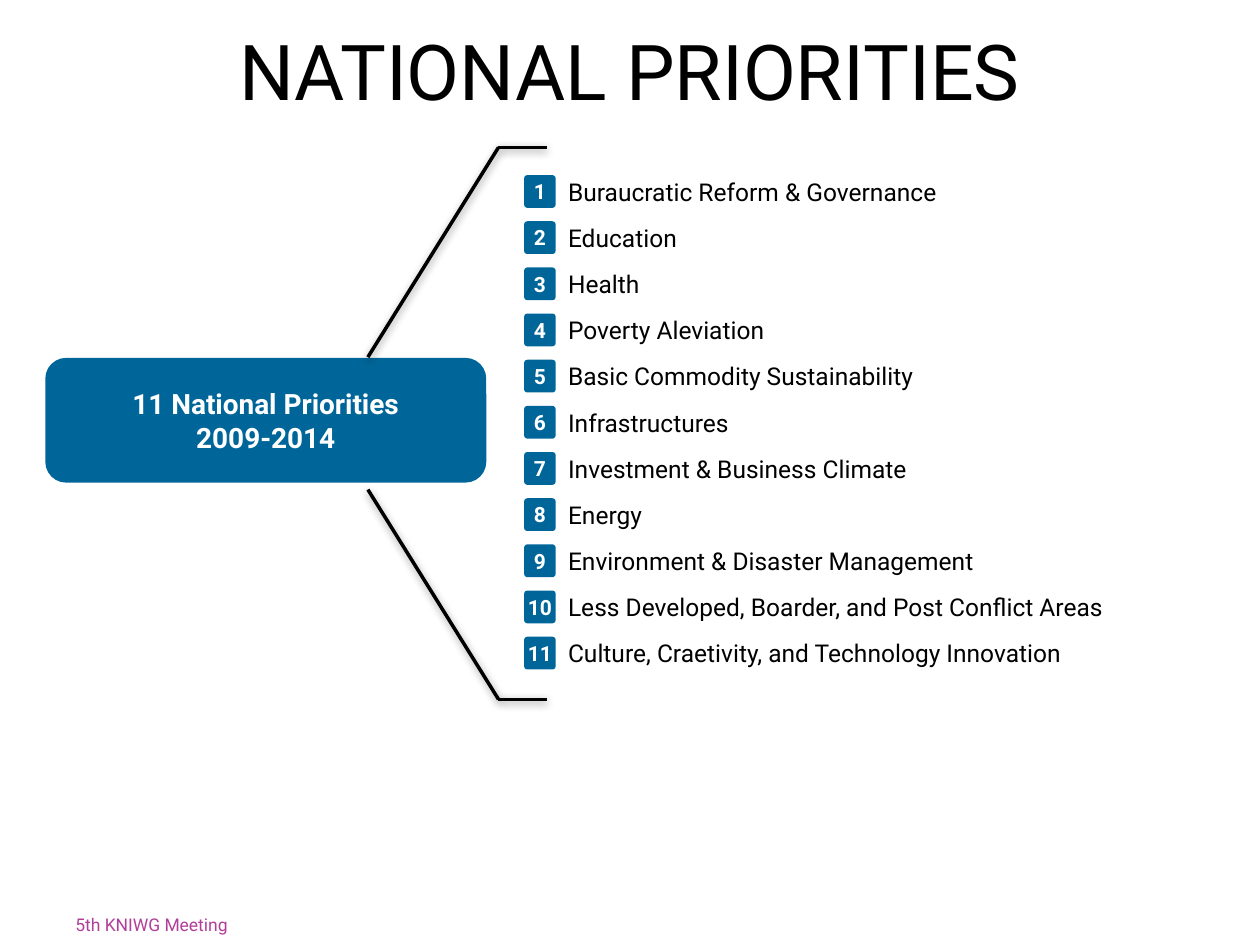
import dataclasses

import lxml.etree
import pptx
import pptx.dml.color
import pptx.enum.shapes
import pptx.enum.text
import pptx.oxml.ns
import pptx.util

ALIGN = pptx.enum.text.PP_ALIGN
ANCHOR = pptx.enum.text.MSO_ANCHOR
CELL = pptx.util.Inches(0.1)
COLUMNS, ROWS = 100, 75

PRIORITIES = [
    "Buraucratic Reform & Governance",
    "Education",
    "Health",
    "Poverty Aleviation",
    "Basic Commodity Sustainability",
    "Infrastructures",
    "Investment & Business Climate",
    "Energy",
    "Environment & Disaster Management",
    "Less Developed, Boarder, and Post Conflict Areas",
    "Culture, Craetivity, and Technology Innovation",
]


@dataclasses.dataclass(frozen=True)
class Theme:
    font: str = "Roboto"
    ink: str = "000000"
    blue: str = "006699"
    light: str = "FFFFFF"
    magenta: str = "B13F9A"
    title_size: int = 44
    banner_size: int = 16
    label_size: int = 14
    number_size: int = 12
    footer_size: int = 10
    line_width: int = 2


@dataclasses.dataclass(frozen=True)
class Box:
    left: float
    top: float
    width: float
    height: float

    def lengths(self):
        return [round(value * CELL) for value in dataclasses.astuple(self)]

    def point(self, across, down):
        return (round((self.left + across * self.width) * CELL),
                round((self.top + down * self.height) * CELL))


THEME = Theme()


def color(value):
    return pptx.dml.color.RGBColor.from_string(value)


def write(shape, text, size, ink, align=ALIGN.LEFT, anchor=ANCHOR.MIDDLE, bold=False):
    frame = shape.text_frame
    frame.word_wrap = True
    frame.vertical_anchor = anchor
    frame.text = text
    for paragraph in frame.paragraphs:
        paragraph.alignment = align
        for run in paragraph.runs:
            run.font.name = THEME.font
            run.font.size = pptx.util.Pt(size)
            run.font.bold = bold
            run.font.color.rgb = color(ink)


def set_margins(shape, horizontal, vertical):
    frame = shape.text_frame
    frame.margin_left = frame.margin_right = pptx.util.Inches(horizontal)
    frame.margin_top = frame.margin_bottom = pptx.util.Inches(vertical)


def add_rounded_box(slide, box, text, size):
    shape = slide.shapes.add_shape(
        pptx.enum.shapes.MSO_SHAPE.ROUNDED_RECTANGLE, *box.lengths())
    shape.shadow.inherit = False
    shape.fill.solid()
    shape.fill.fore_color.rgb = color(THEME.blue)
    shape.line.fill.background()
    write(shape, text, size, THEME.light, ALIGN.CENTER, bold=True)
    return shape


def add_shadow(connector):
    qualify = pptx.oxml.ns.qn
    properties = connector._element.spPr
    effects = lxml.etree.SubElement(properties, qualify("a:effectLst"))
    shadow = lxml.etree.SubElement(
        effects, qualify("a:outerShdw"), blurRad=str(pptx.util.Pt(5)),
        dist=str(pptx.util.Pt(1.6)), dir="5400000", rotWithShape="0")
    shade = lxml.etree.SubElement(shadow, qualify("a:srgbClr"), val=THEME.ink)
    lxml.etree.SubElement(shade, qualify("a:alpha"), val="38000")


def place_title(slide, box):
    title = slide.shapes.title
    title.left, title.top, title.width, title.height = box.lengths()
    write(title, "NATIONAL PRIORITIES", THEME.title_size, THEME.ink, ALIGN.CENTER)


def place_priorities(slide, box):
    pitch = box.height / len(PRIORITIES)
    marker_width, marker_height, label_height = 2.5, 2.6, 3.4
    for index, priority in enumerate(PRIORITIES):
        top = box.top + index * pitch
        marker = add_rounded_box(
            slide, Box(box.left, top, marker_width, marker_height),
            str(index + 1), THEME.number_size)
        marker.adjustments[0] = 0.1
        set_margins(marker, 0, 0)
        label_box = Box(box.left + marker_width,
                        top + (marker_height - label_height) / 2,
                        box.width - marker_width, label_height)
        label = slide.shapes.add_textbox(*label_box.lengths())
        write(label, priority, THEME.label_size, THEME.ink)


def place_bracket(slide, box):
    group = slide.shapes.add_group_shape()
    elbow = 0.73
    for outer, inner in ((0, 0.38), (1, 0.62)):
        for start, end in (((0, inner), (elbow, outer)), ((elbow, outer), (1, outer))):
            connector = group.shapes.add_connector(
                pptx.enum.shapes.MSO_CONNECTOR.STRAIGHT,
                *box.point(*start), *box.point(*end))
            connector.line.color.rgb = color(THEME.ink)
            connector.line.width = pptx.util.Pt(THEME.line_width)
            add_shadow(connector)


def place_footer(slide, box):
    footer = slide.shapes.add_textbox(*box.lengths())
    set_margins(footer, 0.1, 0)
    write(footer, "5th KNIWG Meeting", THEME.footer_size, THEME.magenta,
          anchor=ANCHOR.BOTTOM)


def main():
    presentation = pptx.Presentation()
    presentation.slide_width = COLUMNS * CELL
    presentation.slide_height = ROWS * CELL
    slide = presentation.slides.add_slide(presentation.slide_layouts[5])
    place_title(slide, Box(0, 1.6, COLUMNS, 7.8))
    place_priorities(slide, Box(41.6, 13.9, 57.6, 40.3))
    add_rounded_box(slide, Box(3.6, 28.4, 35, 9.9),
                    "11 National Priorities\n2009-2014", THEME.banner_size)
    place_bracket(slide, Box(29.2, 11.7, 14.2, 43.8))
    place_footer(slide, Box(5, 71.7, 40, 2.5))
    presentation.save("out.pptx")


if __name__ == "__main__":
    main()
